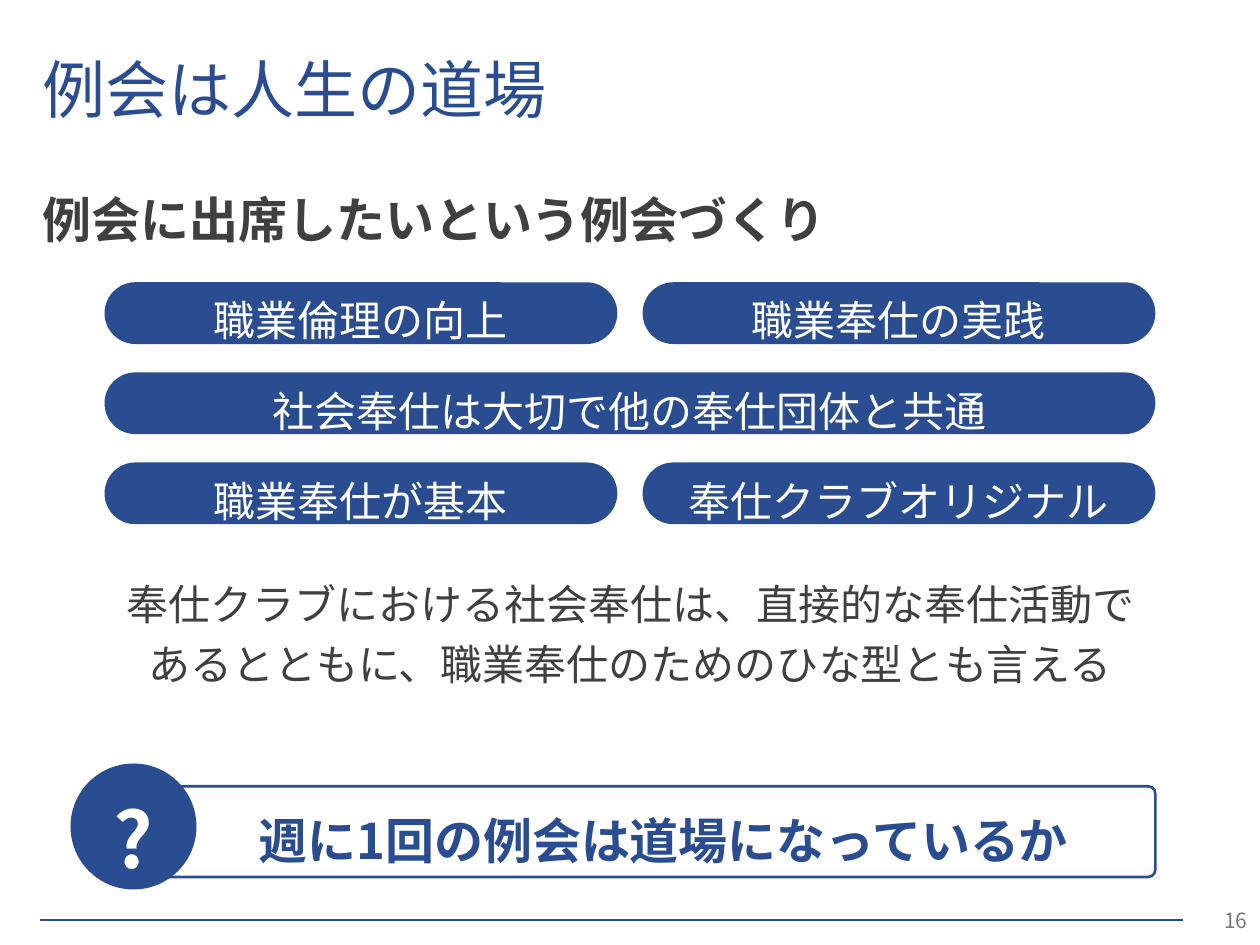
from lxml import etree
from pptx import Presentation
from pptx.dml.color import RGBColor
from pptx.enum import shapes, text
from pptx.oxml.ns import qn
from pptx.util import Inches, Pt

# Content
TITLE = "例会は人生の道場"
LEAD = "例会に出席したいという例会づくり"
ROWS = [
    ["職業倫理の向上", "職業奉仕の実践"],
    ["社会奉仕は大切で他の奉仕団体と共通"],
    ["職業奉仕が基本", "奉仕クラブオリジナル"],
]
NOTE = "奉仕クラブにおける社会奉仕は、直接的な奉仕活動であるとともに、職業奉仕のためのひな型とも言える"
ASK = "週に1回の例会は道場になっているか"
PAGE = "16"

THEME = {
    "font": "Noto Sans CJK JP",
    "blue": "2A4D92", "dark": "404040", "gray": "797979", "white": "FFFFFF",
    "title": 36, "lead": 28, "body": 24, "mark": 44, "page": 12,
}
KIND = shapes.MSO_SHAPE
ALIGN = text.PP_ALIGN
MID = text.MSO_ANCHOR.MIDDLE
PAD = (0.1, 0.08, 0.1, 0.05)


def color(name):
    return RGBColor.from_string(THEME[name])


def write(shape, words, size="body", ink="dark", bold=False, align=ALIGN.LEFT,
          space=1.2, anchor=text.MSO_ANCHOR.TOP, wrap=True, grow=False,
          pad=(0.1, 0.05, 0.1, 0.05)):
    frame = shape.text_frame
    frame.word_wrap = wrap
    fit = text.MSO_AUTO_SIZE
    frame.auto_size = fit.SHAPE_TO_FIT_TEXT if grow else fit.NONE
    frame.vertical_anchor = anchor
    (frame.margin_left, frame.margin_top,
     frame.margin_right, frame.margin_bottom) = map(Inches, pad)
    para = frame.paragraphs[0]
    para.alignment, para.line_spacing = align, space
    run = para.add_run()
    run.text = words
    font = run.font
    font.name, font.size, font.bold = THEME["font"], Pt(THEME[size]), bold
    font.color.rgb = color(ink)
    # East Asian glyphs take their own typeface
    east = etree.SubElement(run._r.get_or_add_rPr(), qn("a:ea"))
    east.set("typeface", THEME["font"])


def draw(slide, kind, box, fill, line=None, bend=None):
    shape = slide.shapes.add_shape(kind, *map(Inches, box))
    shape.shadow.inherit = False
    shape.fill.solid()
    shape.fill.fore_color.rgb = color(fill)
    if line:
        shape.line.color.rgb = color(line)
        shape.line.width = Pt(1.5)
    else:
        shape.line.fill.background()
    if bend is not None:
        shape.adjustments[0] = bend
    return shape


def main():
    deck = Presentation()
    deck.slide_width, deck.slide_height = Inches(10), Inches(7.5)
    slide = deck.slides.add_slide(deck.slide_layouts[5])

    # Footer rule and page number
    page = draw(slide, KIND.RECTANGLE, (9.39, 7.1, 0.61, 0.4), "white")
    write(page, PAGE, size="page", ink="gray", align=ALIGN.RIGHT, space=1, anchor=MID)
    rule = slide.shapes.add_connector(
        shapes.MSO_CONNECTOR.STRAIGHT, *map(Inches, (9.39, 7.3, 0.32, 7.3)))
    rule.begin_connect(page, 1)
    rule.line.color.rgb = color("blue")
    rule.line.width = Pt(1)
    etree.SubElement(rule._element.spPr, qn("a:effectLst"))

    # Title and lead
    title = slide.shapes.title
    title.left, title.top, title.width, title.height = map(Inches, (0.24, 0.44, 9.72, 0.6))
    write(title, TITLE, size="title", ink="blue", space=0.9, anchor=MID)
    lead = slide.shapes.add_textbox(*map(Inches, (0.24, 1.36, 6.48, 0.64)))
    write(lead, LEAD, size="lead", bold=True, wrap=False, grow=True)

    # Pills: each row shares the full width equally
    left, top, full, high, gap, step = 0.83, 2.24, 8.34, 0.49, 0.2, 0.715
    for i, row in enumerate(ROWS):
        wide = (full - gap * (len(row) - 1)) / len(row)
        for j, words in enumerate(row):
            box = (left + j * (wide + gap), top + i * step, wide, high)
            pill = draw(slide, KIND.ROUNDED_RECTANGLE, box, "blue", bend=0.5)
            write(pill, words, ink="white", align=ALIGN.CENTER, anchor=MID,
                  wrap=False, pad=PAD)

    # Remark
    note = slide.shapes.add_textbox(*map(Inches, (0.86, 4.46, 8.28, 1.05)))
    write(note, NOTE, align=ALIGN.CENTER, grow=True)

    # Closing question
    ask = draw(slide, KIND.ROUNDED_RECTANGLE, (1.26, 6.24, 7.91, 0.72), "white",
               line="blue", bend=0.08)
    write(ask, ASK, size="lead", ink="blue", bold=True, align=ALIGN.CENTER,
          anchor=MID, wrap=False, pad=(0.1, 0.08, 0, 0.05))
    mark = draw(slide, KIND.OVAL, (0.56, 6.06, 1, 1), "blue")
    write(mark, "?", size="mark", ink="white", bold=True, align=ALIGN.CENTER,
          anchor=MID, pad=PAD)

    deck.save("out.pptx")


if __name__ == "__main__":
    main()
